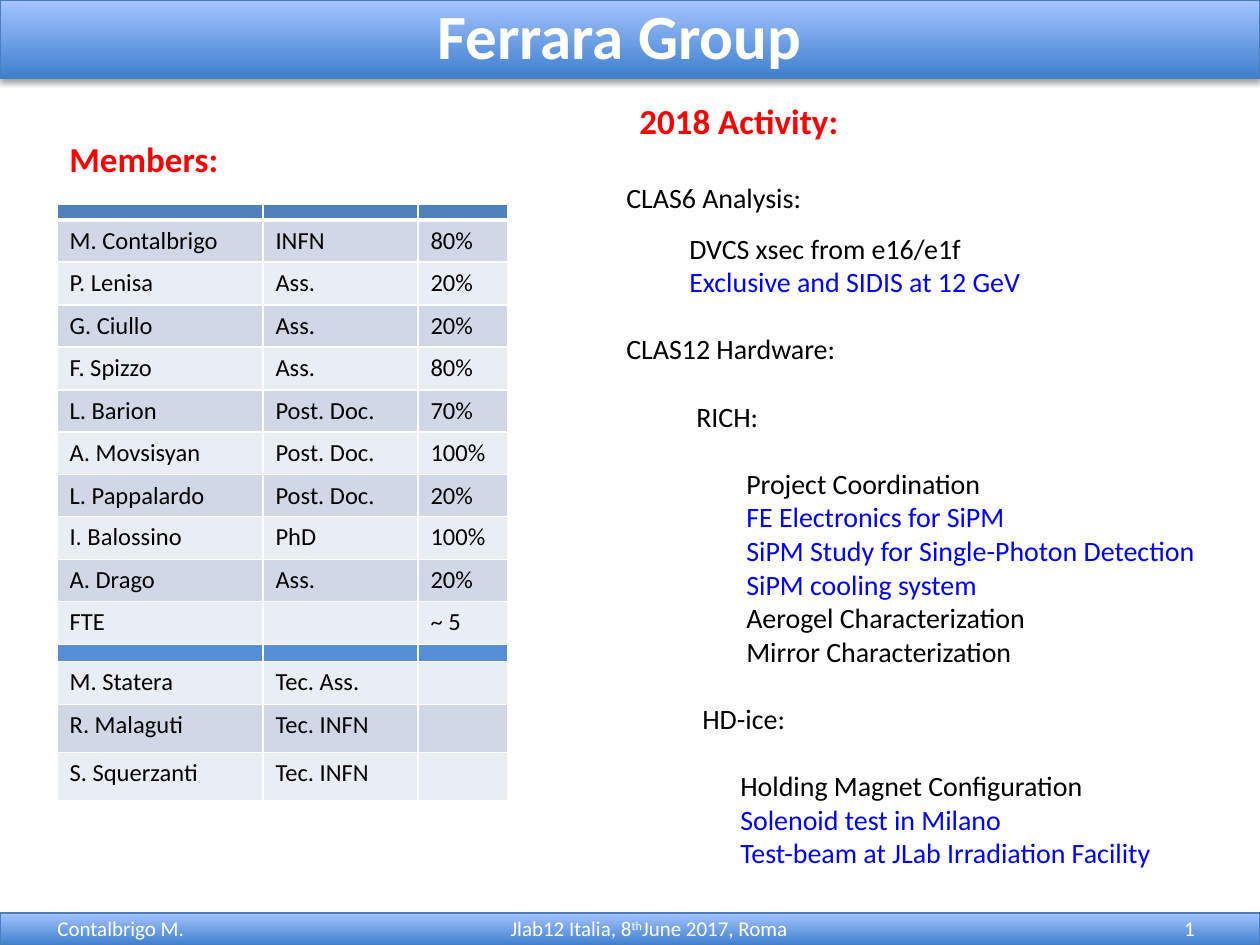
from lxml import etree
from pptx import Presentation
from pptx import util as u
from pptx.dml.color import RGBColor
from pptx.enum import shapes, text
from pptx.oxml import parse_xml
from pptx.oxml.ns import nsdecls, qn

SCALE = 914400 / 126
FONT = "Calibri"
BLACK = RGBColor(0x00, 0x00, 0x00)
WHITE = RGBColor(0xFF, 0xFF, 0xFF)
RED = RGBColor(0xFF, 0x00, 0x00)
BLUE = RGBColor(0x00, 0x00, 0xFF)
DEEP = RGBColor(0x3F, 0x80, 0xCE)
PALE = RGBColor(0xA4, 0xC4, 0xFF)
EDGE = RGBColor(0x4B, 0x7E, 0xBC)
HEAD = RGBColor(0x4F, 0x81, 0xBD)
SPLIT = RGBColor(0x55, 0x8E, 0xD5)
BAND = RGBColor(0xD0, 0xD8, 0xE8)
LIGHT = RGBColor(0xE9, 0xED, 0xF4)

STAFF = [
    ("M. Contalbrigo", "INFN", "80%"),
    ("P. Lenisa", "Ass.", "20%"),
    ("G. Ciullo", "Ass.", "20%"),
    ("F. Spizzo", "Ass.", "80%"),
    ("L. Barion", "Post. Doc.", "70%"),
    ("A. Movsisyan", "Post. Doc.", "100%"),
    ("L. Pappalardo", "Post. Doc.", "20%"),
    ("I. Balossino", "PhD", "100%"),
    ("A. Drago", "Ass.", "20%"),
    ("FTE", "", "~ 5"),
]
TECHS = [
    ("M. Statera", "Tec. Ass.", ""),
    ("R. Malaguti", "Tec. INFN", ""),
    ("S. Squerzanti", "Tec. INFN", ""),
]
COLS = [206, 155, 90]
ROWS = [16] + [42, 43] * 5 + [17, 43, 48, 48]

# Space before in points, indent in px, colour, lines
GAP = 19.2
TASKS = [
    (0, 0, BLACK, ["CLAS6 Analysis:"]),
    (10, 63, BLACK, ["DVCS xsec from e16/e1f"]),
    (0, 63, BLUE, ["Exclusive and SIDIS at 12 GeV"]),
    (GAP, 0, BLACK, ["CLAS12 Hardware:"]),
    (GAP, 70, BLACK, ["RICH:"]),
    (GAP, 120, BLACK, ["Project Coordination"]),
    (0, 120, BLUE, ["FE Electronics for SiPM",
                    "SiPM Study for Single-Photon Detection",
                    "SiPM cooling system"]),
    (0, 120, BLACK, ["Aerogel Characterization", "Mirror Characterization"]),
    (GAP, 76, BLACK, ["HD-ice:"]),
    (GAP, 114, BLACK, ["Holding Magnet Configuration"]),
    (0, 114, BLUE, ["Solenoid test in Milano",
                    "Test-beam at JLab Irradiation Facility"]),
]


def px(n):
    return u.Emu(round(n * SCALE))


def write(para, words, size=16, color=BLACK, bold=False, align=None,
          before=0, indent=0, base=0):
    """Add one run to a paragraph, with its format."""
    if align is not None:
        para.alignment = align
    if before:
        para.space_before = u.Pt(before)
    if indent:
        para._p.get_or_add_pPr().set("marL", str(px(indent)))
    run = para.add_run()
    run.text = words
    font = run.font
    font.name, font.size, font.bold = FONT, u.Pt(size), bold
    font.color.rgb = color
    if base:
        font._element.set("baseline", str(base * 1000))


def add_box(slide, x, y, w, h, wrap=True, anchor=text.MSO_ANCHOR.TOP):
    frame = slide.shapes.add_textbox(px(x), px(y), px(w), px(h)).text_frame
    frame.word_wrap = wrap
    frame.vertical_anchor = anchor
    return frame


def add_bar(slide, y, h):
    """Full-width gradient bar with a soft shadow below."""
    bar = slide.shapes.add_shape(shapes.MSO_SHAPE.RECTANGLE,
                                 0, px(y), px(1260), px(h))
    bar.fill.gradient()
    bar.fill.gradient_angle = 90
    for stop, color in zip(bar.fill.gradient_stops, (DEEP, PALE)):
        stop.color.rgb = color
    bar.line.color.rgb = EDGE
    bar.line.width = u.Pt(0.75)
    bar.shadow.inherit = False
    glow = bar._element.spPr.find(qn("a:effectLst"))
    glow.append(parse_xml(
        f'<a:outerShdw {nsdecls("a")} blurRad="{u.Pt(3.1)}" '
        f'dist="{u.Pt(1.8)}" dir="5400000" rotWithShape="0">'
        '<a:srgbClr val="000000"><a:alpha val="35000"/></a:srgbClr>'
        '</a:outerShdw>'))


def add_rule(cell, side, width):
    line = etree.SubElement(cell._tc.get_or_add_tcPr(), qn(f"a:ln{side}"),
                            w=str(u.Pt(width)))
    fill = etree.SubElement(line, qn("a:solidFill"))
    etree.SubElement(fill, qn("a:srgbClr"), val=str(WHITE))


def fill_cell(cell, words, color, top, bottom, thin):
    for side, width in zip("LRTB", (1, 1, top, bottom)):
        add_rule(cell, side, width)
    cell.fill.solid()
    cell.fill.fore_color.rgb = color
    cell.margin_top = cell.margin_bottom = px(0 if thin else 6)
    para = cell.text_frame.paragraphs[0]
    if words:
        write(para, words, size=14)
    else:
        para._p.get_or_add_endParaRPr().set("sz", "100" if thin else "1400")


def add_members(slide):
    blank = ("", "", "")
    rows = [blank] + STAFF + [blank] + TECHS
    split = len(STAFF) + 1
    table = slide.shapes.add_table(len(rows), len(COLS), px(57), px(204),
                                   px(sum(COLS)), px(sum(ROWS))).table
    table.first_row = table.horz_banding = False
    for col, width in zip(table.columns, COLS):
        col.width = px(width)
    for i, row in enumerate(rows):
        table.rows[i].height = px(ROWS[i])
        color = {0: HEAD, split: SPLIT}.get(i, BAND if i % 2 else LIGHT)
        for j, words in enumerate(row):
            fill_cell(table.cell(i, j), words, color,
                      top=3 if i == 1 else 1, bottom=3 if i == 0 else 1,
                      thin=i in (0, split))


def add_tasks(slide):
    frame = add_box(slide, 614, 174, 602, 708)
    para = frame.paragraphs[0]
    for before, indent, color, lines in TASKS:
        for words in lines:
            if para.runs:
                para = frame.add_paragraph()
            write(para, words, color=color, before=before, indent=indent)


def add_foot(slide):
    add_bar(slide, 913, 32)
    style = dict(size=12, color=WHITE)
    low = text.MSO_ANCHOR.BOTTOM
    page = add_box(slide, 913, 897, 294, 50, anchor=low)
    write(page.paragraphs[0], "1", align=text.PP_ALIGN.RIGHT, **style)
    name = add_box(slide, 45, 897, 294, 50, anchor=low)
    write(name.paragraphs[0], "Contalbrigo M.", **style)
    event = add_box(slide, 243, 897, 812, 50, anchor=low).paragraphs[0]
    for words, base in (("Jlab12 Italia, 8", 0), ("th", 30),
                        ("June 2017, Roma", 0)):
        write(event, words, base=base, align=text.PP_ALIGN.CENTER, **style)


def main():
    deck = Presentation()
    deck.slide_width, deck.slide_height = px(1260), px(945)
    slide = deck.slides.add_slide(deck.slide_layouts[6])

    # Body
    add_members(slide)
    add_tasks(slide)
    for words, x, y, w in (("2018 Activity:", 627, 93, 226),
                           ("Members:", 57, 131, 176)):
        frame = add_box(slide, x, y, w, 55, wrap=False)
        write(frame.paragraphs[0], words, size=20, color=RED, bold=True)

    # Footer and title
    add_foot(slide)
    add_bar(slide, 0, 78)
    title = add_box(slide, 421, -10, 397, 89, wrap=False)
    write(title.paragraphs[0], "Ferrara Group", size=36, color=WHITE,
          bold=True, align=text.PP_ALIGN.CENTER)
    deck.save("out.pptx")


if __name__ == "__main__":
    main()
